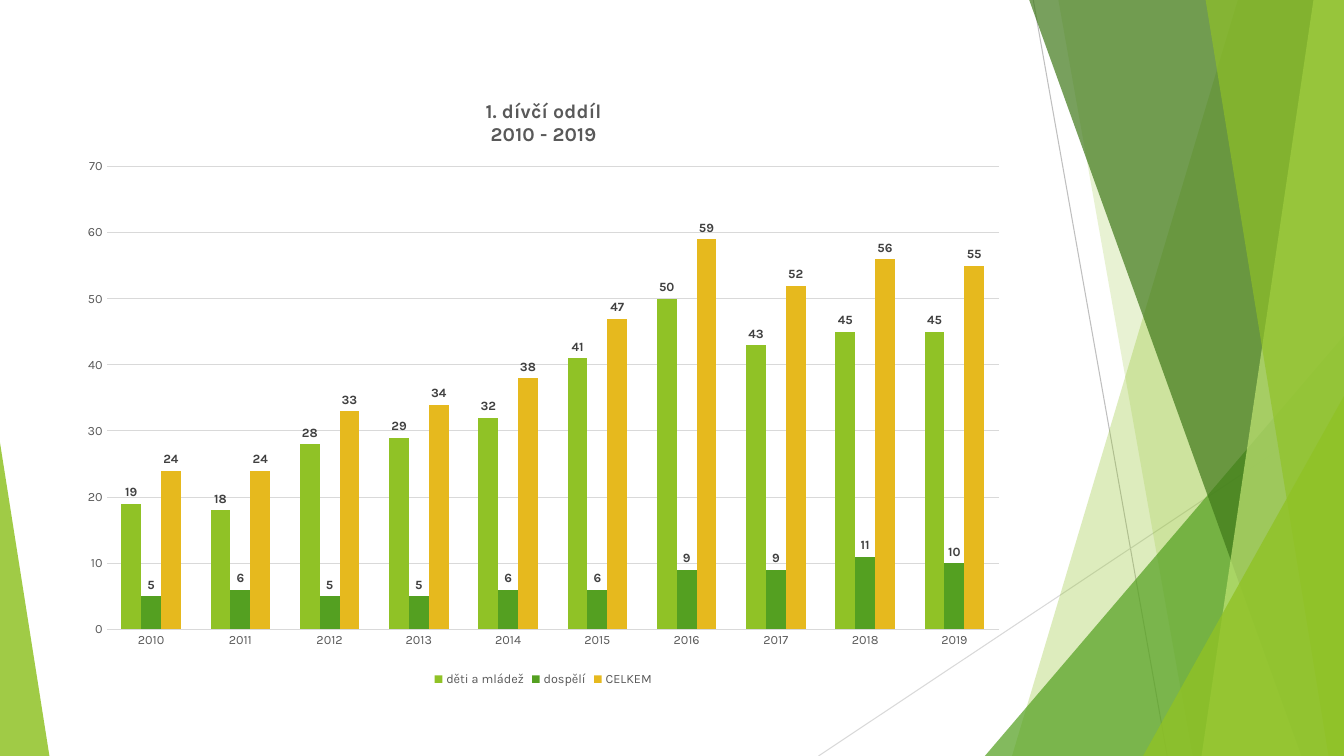
from collections import namedtuple

from lxml.etree import SubElement, fromstring
from pptx import Presentation
from pptx.chart.data import CategoryChartData
from pptx.dml.color import RGBColor
from pptx.enum.chart import XL_CHART_TYPE as ChartType
from pptx.enum.chart import XL_LABEL_POSITION as LabelPosition
from pptx.enum.chart import XL_LEGEND_POSITION as LegendPosition
from pptx.enum.chart import XL_TICK_MARK as TickMark
from pptx.enum.shapes import MSO_CONNECTOR as Connector
from pptx.enum.shapes import MSO_SHAPE as Shape
from pptx.oxml.ns import qn
from pptx.util import Inches, Pt

Box = namedtuple("Box", "left top width height")
FONT = "Karla"
COLORS = {
    "lime": "90C226", "green": "54A021", "forest": "3F7819", "pale": "C0E474",
    "gold": "E6B91E", "text": "595959", "label": "404040",
    "grid": "D9D9D9", "ray": "BFBFBF",
}
YEARS = [str(year) for year in range(2010, 2020)]
SERIES = [
    ("děti a mládež", [19, 18, 28, 29, 32, 41, 50, 43, 45, 45], "lime"),
    ("dospělí", [5, 6, 5, 5, 6, 6, 9, 9, 11, 10], "green"),
    ("CELKEM", [24, 24, 33, 34, 38, 47, 59, 52, 56, 55], "gold"),
]


def color(name):
    """Look up a palette colour."""
    return RGBColor.from_string(COLORS[name])


def at(box, x, y):
    """Turn percentages of a box into a point."""
    return round(box.left + box.width * x / 100), round(box.top + box.height * y / 100)


def part(box, left, top, right, bottom):
    """Cut a smaller box out of a box by percentages."""
    x, y = at(box, left, top)
    end_x, end_y = at(box, right, bottom)
    return Box(x, y, end_x - x, end_y - y)


def paint(shape, fill, opacity):
    """Give a shape a translucent fill without line or shadow."""
    shape.shadow.inherit = False
    shape.line.fill.background()
    shape.fill.solid()
    shape.fill.fore_color.rgb = color(fill)
    tone = shape.fill._xPr.find(".//" + qn("a:srgbClr"))
    SubElement(tone, qn("a:alpha"), val=str(opacity * 1000))


def add_ray(page, box, start, end, tone):
    """Draw a thin line across the box."""
    ray = page.shapes.add_connector(Connector.STRAIGHT, *at(box, *start), *at(box, *end))
    ray.line.color.rgb = color(tone)
    ray.line.width = Pt(0.75)
    SubElement(ray._element.spPr, qn("a:effectLst"))


def add_facet(page, box, top_x, bottom_x, fill, opacity):
    """Draw a full-height panel from a slanted edge to the right edge."""
    outline = page.shapes.build_freeform(*at(box, top_x, 0), scale=1.0)
    outline.add_line_segments([at(box, 100, 0), at(box, 100, 100), at(box, bottom_x, 100)])
    paint(outline.convert_to_shape(), fill, opacity)


def add_wedge(page, box, left, top, right, apex, fill, opacity):
    """Draw a triangle standing on the bottom edge."""
    wedge = page.shapes.add_shape(Shape.ISOSCELES_TRIANGLE, *part(box, left, top, right, 100))
    wedge.adjustments[0] = apex
    paint(wedge, fill, opacity)


def add_backdrop(page, box):
    """Layer the rays and green facets of the background."""
    add_ray(page, box, (76.88, 0), (86.85, 100), "ray")
    add_ray(page, box, (100, 53.73), (60.9, 100), "grid")
    add_facet(page, box, 92.1, 75.3, "lime", 30)
    add_facet(page, box, 78.75, 88.73, "lime", 20)
    add_wedge(page, box, 73.28, 44.4, 100, 1, "green", 72)
    for top_x, bottom_x, fill, opacity in [
        (76.58, 96.83, "forest", 70),
        (97.73, 89.4, "pale", 70),
        (89.7, 98.85, "lime", 65),
    ]:
        add_facet(page, box, top_x, bottom_x, fill, opacity)
    add_wedge(page, box, 85.05, 52.4, 100, 1, "lime", 80)
    add_wedge(page, box, 0, 58.53, 3.68, 0, "lime", 85)


def style(font, size=9, tone="text", bold=False):
    """Format a chart font."""
    font.name, font.size, font.bold = FONT, Pt(size), bold
    font.color.rgb = color(tone)


def add_text(frame, text, **format):
    """Write centred lines of text with one format."""
    for index, line in enumerate(text.split("\n")):
        para = frame.paragraphs[0] if index == 0 else frame.add_paragraph()
        span = para.add_run()
        span.text = line
        style(span.font, **format)


def place(owner, index, inner=False, **shares):
    """Fix the position of a chart part as shares of the chart."""
    for old in owner.findall(qn("c:layout")):
        owner.remove(old)
    target = '<c:layoutTarget val="inner"/>' if inner else ""
    modes = '<c:xMode val="edge"/><c:yMode val="edge"/>'
    sizes = "".join(f'<c:{key} val="{value}"/>' for key, value in shares.items())
    owner.insert(index, fromstring(
        '<c:layout xmlns:c="http://schemas.openxmlformats.org/drawingml/2006/chart">'
        f"<c:manualLayout>{target}{modes}{sizes}</c:manualLayout></c:layout>"))


def style_axis(axis):
    """Leave only the tick labels of an axis."""
    axis.major_tick_mark = axis.minor_tick_mark = TickMark.NONE
    axis.format.line.fill.background()
    style(axis.tick_labels.font)


def add_member_chart(page, box):
    """Draw the clustered columns of members by year."""
    data = CategoryChartData()
    data.categories = YEARS
    for name, values, _ in SERIES:
        data.add_series(name, values)
    chart = page.shapes.add_chart(ChartType.COLUMN_CLUSTERED, *box, data).chart
    style(chart.font)
    chart.has_title = True
    add_text(chart.chart_title.text_frame, "1. dívčí oddíl\n2010 - 2019", size=14, bold=True)
    chart.chart_title.include_in_layout = False
    place(chart.chart_title._element, 1, x=0.436, y=0.036)
    place(chart._chartSpace.chart.plotArea, 0, inner=True, x=0.04, y=0.151, w=0.94, h=0.75)

    style_axis(chart.category_axis)
    scale = chart.value_axis
    style_axis(scale)
    scale.minimum_scale, scale.maximum_scale, scale.major_unit = 0, 70, 10
    scale.major_gridlines.format.line.color.rgb = color("grid")
    scale.major_gridlines.format.line.width = Pt(0.75)

    chart.has_legend = True
    chart.legend.position = LegendPosition.BOTTOM
    chart.legend.include_in_layout = False
    style(chart.legend.font)

    plot = chart.plots[0]
    plot.gap_width, plot.overlap, plot.vary_by_categories = 150, 0, False
    for series, (_, _, fill) in zip(plot.series, SERIES):
        series.format.fill.solid()
        series.format.fill.fore_color.rgb = color(fill)
        labels = series.data_labels
        labels.show_value = True
        labels.position = LabelPosition.OUTSIDE_END
        style(labels.font, tone="label", bold=True)


def main():
    """Build and save the deck."""
    deck = Presentation()
    deck.slide_width, deck.slide_height = Inches(13.33), Inches(7.5)
    page = deck.slides.add_slide(deck.slide_layouts[6])
    box = Box(0, 0, deck.slide_width, deck.slide_height)
    add_backdrop(page, box)
    add_member_chart(page, part(box, 5.1, 9.73, 75.75, 91.33))
    deck.save("out.pptx")


if __name__ == "__main__":
    main()
